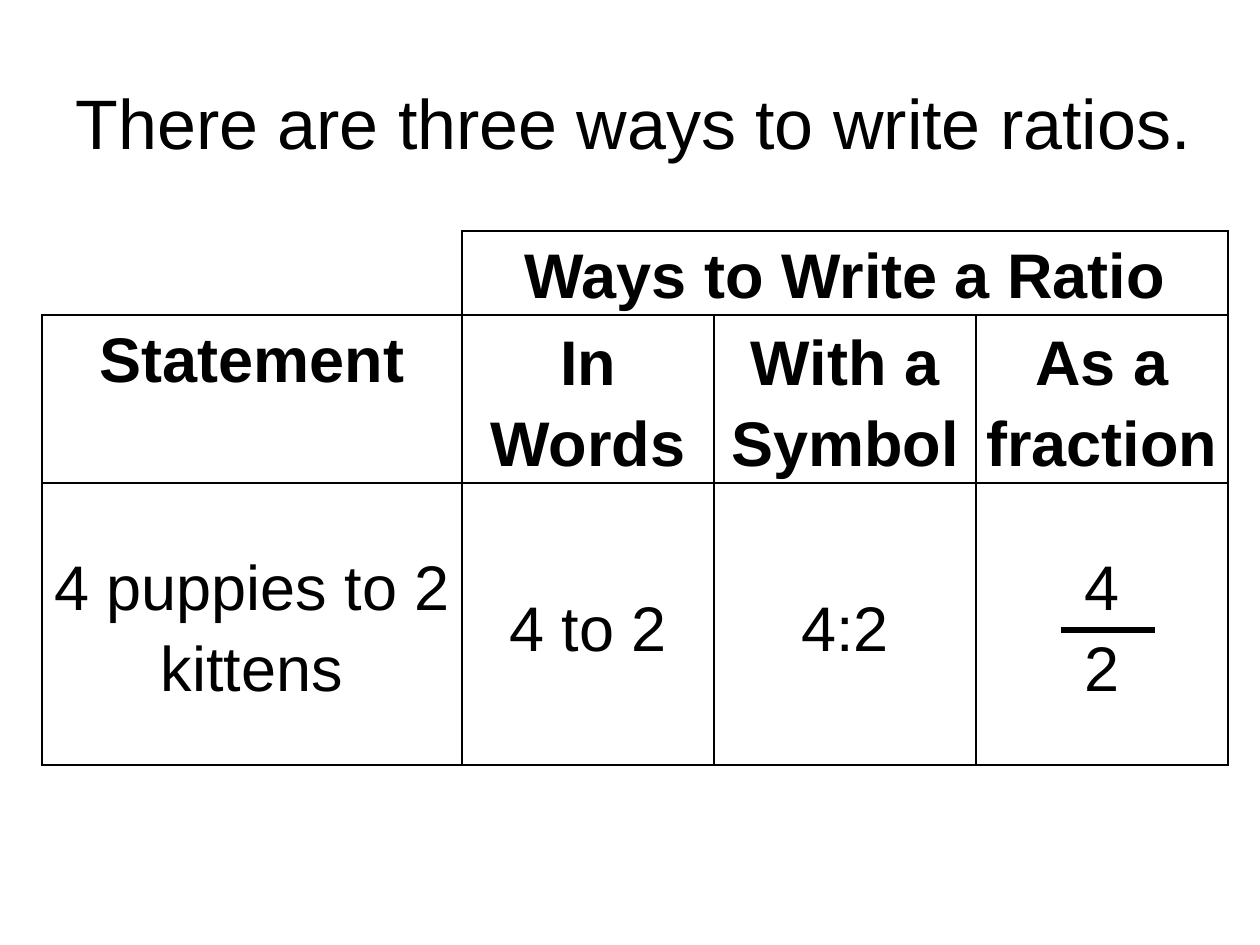
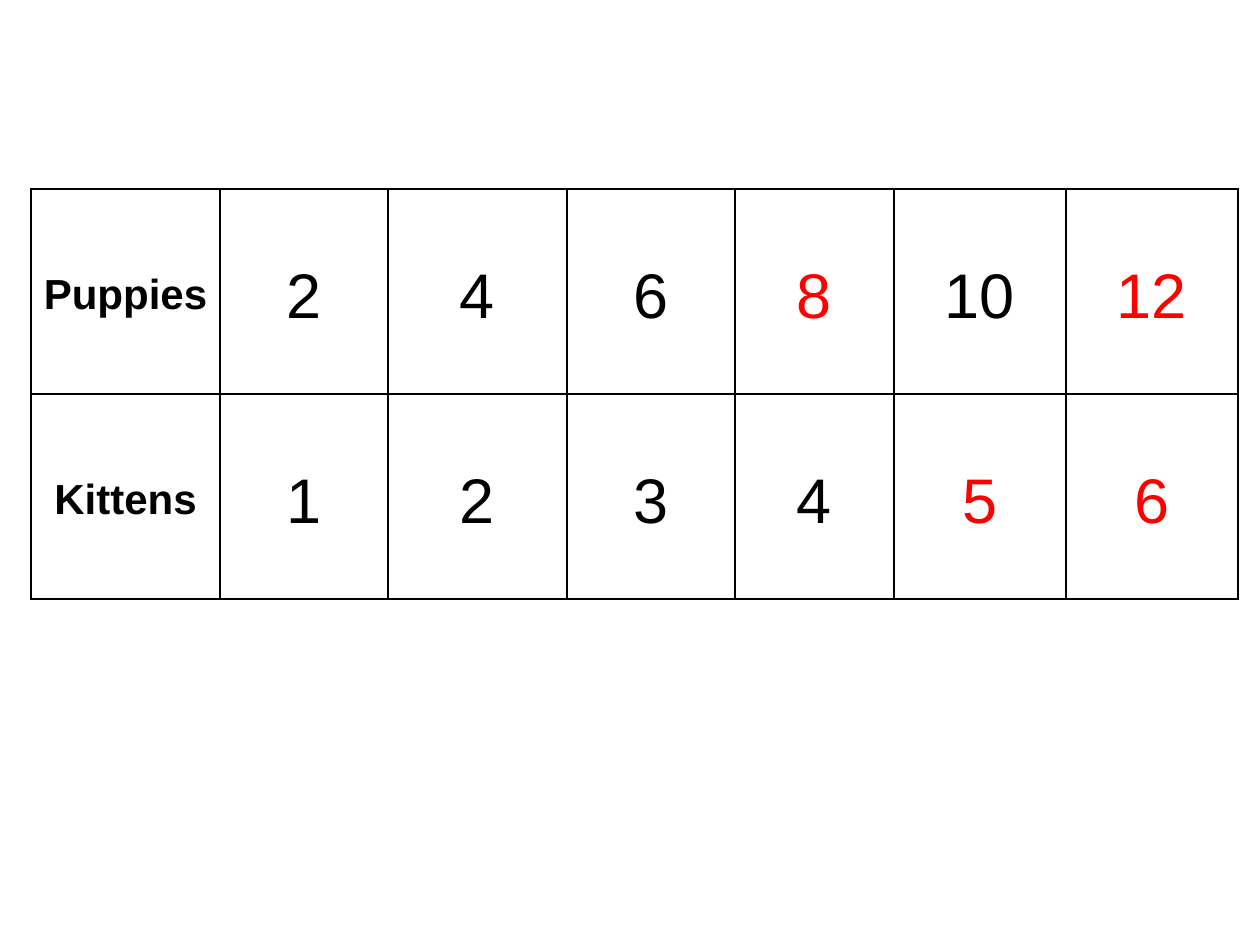
from lxml import etree
from pptx import Presentation
from pptx import util as u
from pptx.dml.color import RGBColor
from pptx.enum import shapes, text
from pptx.oxml.ns import qn

PX = u.Inches(1) / 126
FONT = "Arial"
BLACK, RED = "000000", "FF0000"
TITLE_ONLY, BLANK = 5, 6


def px(length):
    """Turn pixels into EMU."""
    return u.Emu(round(length * PX))


def color(value):
    """Turn a hex string into a colour."""
    return RGBColor.from_string(value)


def style_font(para, size, bold=False, ink=BLACK):
    """Set the font of a whole paragraph."""
    para.font.name = FONT
    para.font.size = u.Pt(size)
    para.font.bold = bold
    para.font.color.rgb = color(ink)


def add_title(page, words, left, top, width, height):
    """Place and format the title placeholder."""
    title = page.shapes.title
    title.left, title.top = px(left), px(top)
    title.width, title.height = px(width), px(height)
    frame = title.text_frame
    frame.text = words
    frame.word_wrap = True
    frame.auto_size = text.MSO_AUTO_SIZE.NONE
    frame.vertical_anchor = text.MSO_ANCHOR.MIDDLE
    para = frame.paragraphs[0]
    para.alignment = text.PP_ALIGN.LEFT
    style_font(para, 40)


def set_borders(cell, sides):
    """Draw the named sides of a cell and hide the others."""
    properties = cell._tc.get_or_add_tcPr()
    for side in "LRTB":
        line = etree.SubElement(properties, qn(f"a:ln{side}"), w=str(u.Pt(1)))
        if side in sides:
            fill = etree.SubElement(line, qn("a:solidFill"))
            etree.SubElement(fill, qn("a:srgbClr"), val=BLACK)
        else:
            etree.SubElement(line, qn("a:noFill"))


def add_grid(page, left, top, columns, rows):
    """Add a table without banding, fills or borders."""
    frame = page.shapes.add_table(len(rows), len(columns), px(left), px(top),
                                  px(sum(columns)), px(sum(rows)))
    table = frame.table
    table.first_row = table.horz_banding = False
    for column, width in zip(table.columns, columns):
        column.width = px(width)
    for row, height in zip(table.rows, rows):
        row.height = px(height)
    return table


def finish_cell(cell, sides="LRTB"):
    """Give a cell its borders and a clear fill."""
    set_borders(cell, sides)
    cell.fill.background()


def write_cell(cell, words, size=36, bold=False, ink=BLACK,
               anchor=text.MSO_ANCHOR.MIDDLE):
    """Write centred text into a cell."""
    cell.text = words
    cell.vertical_anchor = anchor
    cell.margin_left = cell.margin_right = px(9)
    cell.margin_top = cell.margin_bottom = 0
    for para in cell.text_frame.paragraphs:
        para.alignment = text.PP_ALIGN.CENTER
        para.line_spacing = 1.15
        style_font(para, size, bold, ink)


def add_rule(page, left, right, level, weight):
    """Add a horizontal line."""
    rule = page.shapes.add_connector(shapes.MSO_CONNECTOR.STRAIGHT,
                                     px(left), px(level), px(right), px(level))
    rule.line.color.rgb = color(BLACK)
    rule.line.width = u.Pt(weight)
    etree.SubElement(rule._element.spPr, qn("a:effectLst"))


def build_ways(deck):
    """Build the slide with the three ways to write a ratio."""
    page = deck.slides.add_slide(deck.slide_layouts[TITLE_ONLY])
    add_title(page, "There are three ways to write ratios.", 63, 73, 1166, 97)
    table = add_grid(page, 42, 231, [237, 183, 252, 262, 252], [84, 168, 282])
    open_sides = {(0, 0): "B", (0, 1): "RB"}
    for row in range(3):
        for column in range(5):
            finish_cell(table.cell(row, column),
                        open_sides.get((row, column), "LRTB"))
    table.cell(0, 2).merge(table.cell(0, 4))
    for row in (1, 2):
        table.cell(row, 0).merge(table.cell(row, 1))

    top = text.MSO_ANCHOR.TOP
    write_cell(table.cell(0, 2), "Ways to Write a Ratio", bold=True, anchor=top)
    write_cell(table.cell(1, 0), "Statement", bold=True, anchor=top)
    write_cell(table.cell(2, 0), "4 puppies to 2 kittens")
    ways = [("In Words", "4 to 2"), ("With a Symbol", "4:2"),
            ("As a fraction", "4\n2")]
    for column, (heading, ratio) in enumerate(ways, start=2):
        write_cell(table.cell(1, column), heading, bold=True)
        write_cell(table.cell(2, column), ratio)
    add_rule(page, 1061, 1155, 630, 3)


def build_equal_ratios(deck):
    """Build the slide with the table of equal ratios."""
    page = deck.slides.add_slide(deck.slide_layouts[BLANK])
    table = add_grid(page, 31, 189, [189, 168, 179, 168, 159, 172, 172],
                     [205, 205])
    animals = [("Puppies", 2, {8, 12}), ("Kittens", 1, {5, 6})]
    for row, (animal, step, answers) in enumerate(animals):
        write_cell(table.cell(row, 0), animal, size=24, bold=True)
        finish_cell(table.cell(row, 0))
        for column in range(1, 7):
            count = step * column
            cell = table.cell(row, column)
            write_cell(cell, str(count), ink=RED if count in answers else BLACK)
            finish_cell(cell)


def main():
    """Build and save the deck."""
    deck = Presentation()
    deck.slide_width, deck.slide_height = px(1260), px(945)
    build_ways(deck)
    build_equal_ratios(deck)
    deck.save("out.pptx")


if __name__ == "__main__":
    main()
